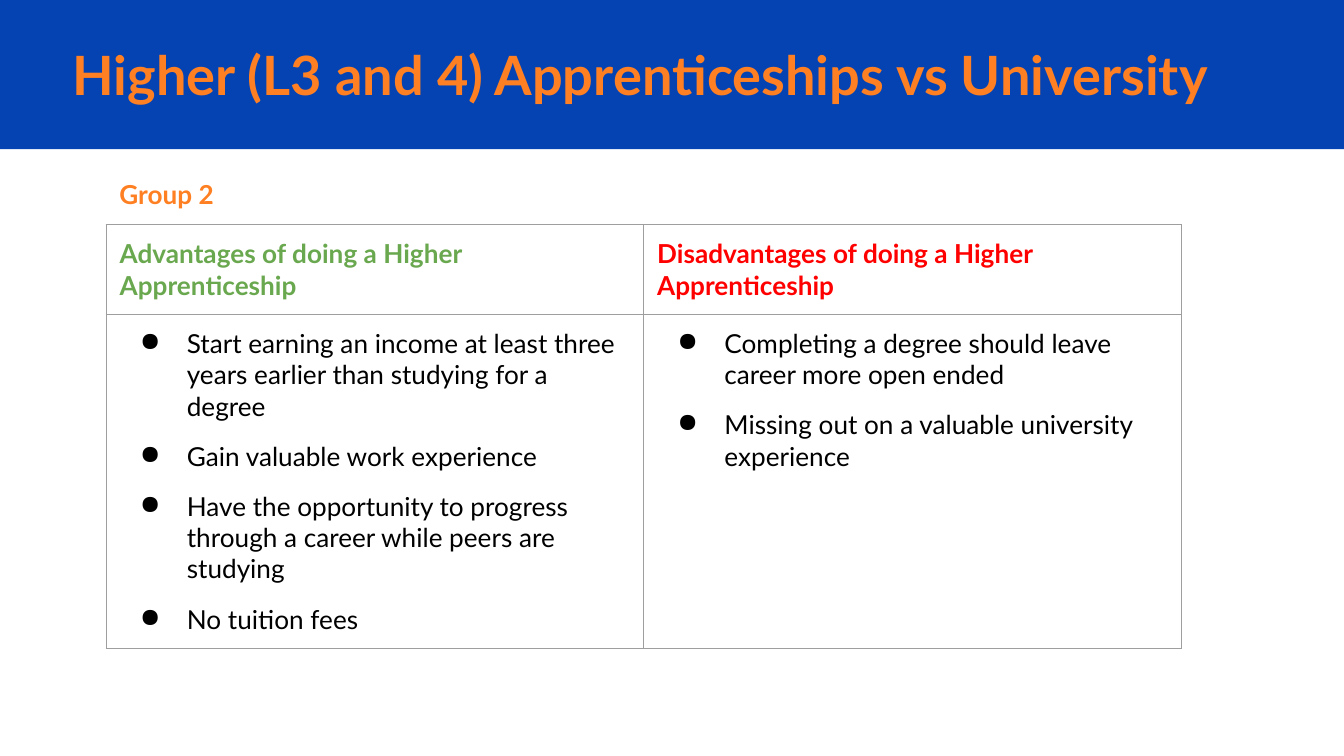
from dataclasses import dataclass

from lxml.etree import SubElement
from pptx import Presentation
from pptx.dml.color import RGBColor as Rgb
from pptx.enum.shapes import MSO_SHAPE as Shape
from pptx.enum.text import MSO_ANCHOR as Anchor
from pptx.oxml.ns import qn
from pptx.util import Inches, Pt

FONT = "Lato"
COLOURS = {
    "banner": "0543B3",
    "heading": "FF8022",
    "advantage": "6AA84F",
    "disadvantage": "FF0000",
    "body": "000000",
    "border": "9E9E9E",
}


@dataclass(frozen=True)
class Label:
    text: str
    left: float
    top: float
    width: float
    height: float
    size: float
    anchor: Anchor


@dataclass(frozen=True)
class Column:
    heading: str
    colour: str
    points: tuple[str, ...]


LABELS = (
    Label("Higher (L3 and 4) Apprenticeships vs University",
          0.44, 0.21, 9.32, 0.68, 29, Anchor.MIDDLE),
    Label("Group 2", 0.79, 1.23, 4.47, 0.44, 14, Anchor.TOP),
)
COLUMNS = (
    Column("Advantages of doing a Higher Apprenticeship", "advantage", (
        "Start earning an income at least three years earlier than studying for a degree",
        "Gain valuable work experience",
        "Have the opportunity to progress through a career while peers are studying",
        "No tuition fees",
    )),
    Column("Disadvantages of doing a Higher Apprenticeship", "disadvantage", (
        "Completing a degree should leave career more open ended",
        "Missing out on a valuable university experience",
    )),
)


def rgb(name: str) -> Rgb:
    """Return a named colour."""
    return Rgb.from_string(COLOURS[name])


def format_text(frame, size: float, colour: str, bold: bool) -> None:
    """Apply one font to every run."""
    for para in frame.paragraphs:
        for span in para.runs:
            span.font.name = FONT
            span.font.size = Pt(size)
            span.font.bold = bold
            span.font.color.rgb = rgb(colour)


def set_margins(target) -> None:
    """Give a text frame or cell equal margins."""
    for side in ("left", "right", "top", "bottom"):
        setattr(target, f"margin_{side}", Inches(0.1))


def add_bullet(para) -> None:
    """Give a paragraph a hanging bullet."""
    props = para._p.get_or_add_pPr()
    props.set("marL", str(Inches(0.5)))
    props.set("indent", str(Inches(-0.35)))
    colour = SubElement(props, qn("a:buClr"))
    SubElement(colour, qn("a:srgbClr"), val=COLOURS["body"])
    SubElement(props, qn("a:buChar"), char="●")


def style_cell(cell) -> None:
    """Set the borders, margins and empty fill of a cell."""
    set_margins(cell)
    props = cell._tc.get_or_add_tcPr()
    for side in ("lnL", "lnR", "lnT", "lnB"):
        line = SubElement(props, qn(f"a:{side}"), w=str(Pt(0.75)))
        fill = SubElement(line, qn("a:solidFill"))
        SubElement(fill, qn("a:srgbClr"), val=COLOURS["border"])
    cell.fill.background()


def add_banner(page) -> None:
    """Draw the band behind the title."""
    banner = page.shapes.add_shape(Shape.RECTANGLE, 0, 0, Inches(10), Inches(1.11))
    banner.shadow.inherit = False
    banner.fill.solid()
    banner.fill.fore_color.rgb = rgb("banner")
    banner.line.fill.background()


def add_comparison(page, columns: tuple[Column, ...]) -> None:
    """Draw the table with one heading and one list per column."""
    heights = (0.65, 2.48)
    table = page.shapes.add_table(
        len(heights), len(columns), Inches(0.79), Inches(1.67),
        Inches(4 * len(columns)), Inches(sum(heights))).table
    table.first_row = False
    table.horz_banding = False
    for row, height in zip(table.rows, heights):
        row.height = Inches(height)
    for index, column in enumerate(columns):
        table.columns[index].width = Inches(4)
        heading, body = table.cell(0, index), table.cell(1, index)
        style_cell(heading)
        style_cell(body)
        heading.text_frame.text = column.heading
        format_text(heading.text_frame, 14, column.colour, True)
        body.text_frame.text = "\n".join(column.points)
        format_text(body.text_frame, 14, "body", False)
        for position, para in enumerate(body.text_frame.paragraphs):
            para.space_before = Pt(10 if position else 0)
            add_bullet(para)


def add_label(page, label: Label) -> None:
    """Draw a bold heading in a text box."""
    box = page.shapes.add_textbox(
        Inches(label.left), Inches(label.top), Inches(label.width), Inches(label.height))
    frame = box.text_frame
    frame.word_wrap = True
    frame.vertical_anchor = label.anchor
    set_margins(frame)
    frame.text = label.text
    format_text(frame, label.size, "heading", True)


def main() -> None:
    """Build and save the slide."""
    deck = Presentation()
    deck.slide_width = Inches(10)
    deck.slide_height = Inches(10 * 9 / 16)
    page = deck.slides.add_slide(deck.slide_layouts[6])
    add_banner(page)
    add_comparison(page, COLUMNS)
    for label in LABELS:
        add_label(page, label)
    deck.save("out.pptx")


if __name__ == "__main__":
    main()
